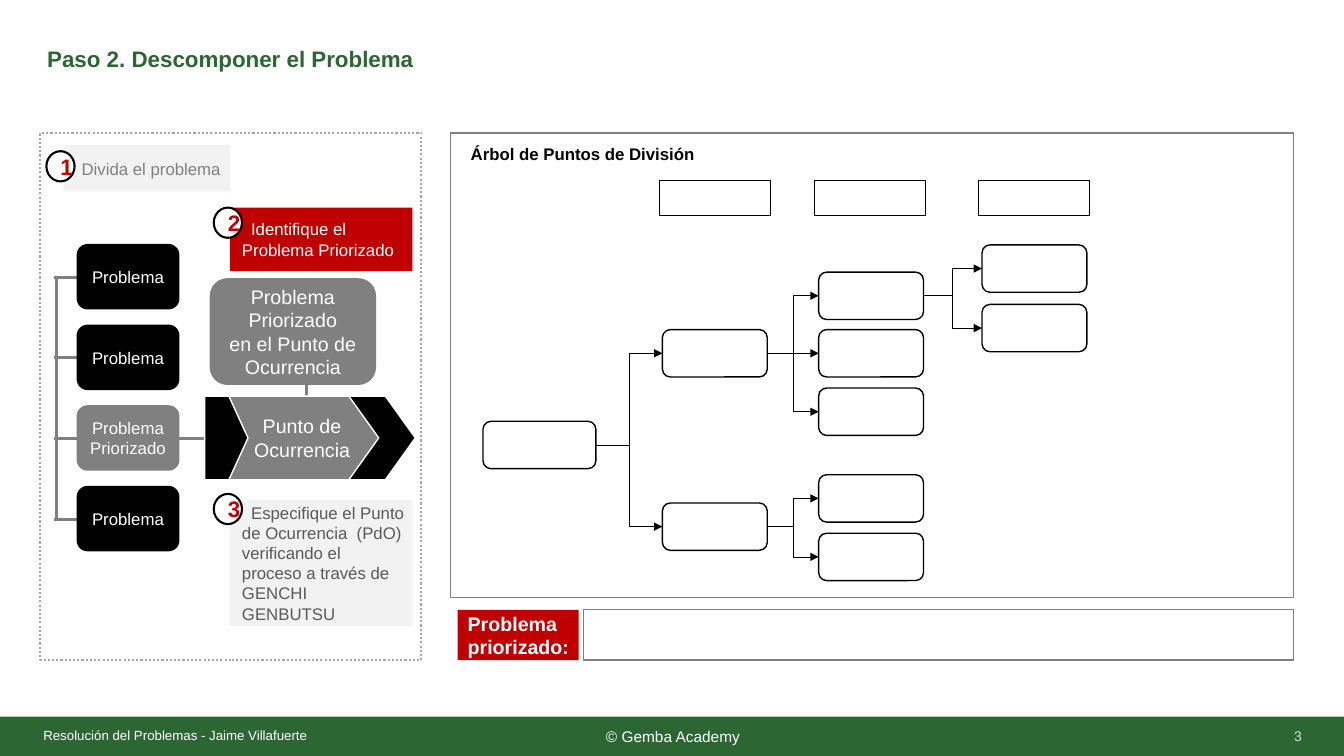
from dataclasses import dataclass
from typing import Optional

from lxml.etree import SubElement
from pptx import Presentation
from pptx.dml.color import RGBColor
from pptx.enum.dml import MSO_LINE
from pptx.enum.shapes import MSO_CONNECTOR, MSO_SHAPE
from pptx.enum.text import MSO_ANCHOR, PP_ALIGN
from pptx.oxml.ns import qn
from pptx.shapes.autoshape import Shape
from pptx.shapes.connector import Connector
from pptx.slide import Slide
from pptx.util import Emu, Pt

EMU_PER_PX = 9144
FONT = "Arial"
WHITE = RGBColor(0xFF, 0xFF, 0xFF)
BLACK = RGBColor(0x00, 0x00, 0x00)
GREEN = RGBColor(0x2B, 0x66, 0x33)
RED = RGBColor(0xC0, 0x00, 0x00)
GRAY = RGBColor(0x80, 0x80, 0x80)
DARK_GRAY = RGBColor(0x59, 0x59, 0x59)
DOT_GRAY = RGBColor(0xA6, 0xA6, 0xA6)
PALE_GRAY = RGBColor(0xF2, 0xF2, 0xF2)
NUMBER_GRAY = RGBColor(0xD9, 0xD9, 0xD9)

PROBLEM_TOP, PROBLEM_STEP, PROBLEM_HEIGHT = 242, 80, 65
LEVEL_LEFTS = (479, 657, 812, 974)
NODE_HEIGHT = 47


@dataclass(frozen=True)
class Label:
    text: str
    size: float
    color: RGBColor = WHITE
    bold: bool = False
    align: PP_ALIGN = PP_ALIGN.CENTER
    anchor: MSO_ANCHOR = MSO_ANCHOR.MIDDLE
    insets: tuple[int, int, int, int] = (10, 5, 10, 5)
    indent: int = 0
    line_spacing: Optional[float] = None


@dataclass(frozen=True)
class Box:
    left: int
    top: int
    width: int
    height: int
    preset: MSO_SHAPE = MSO_SHAPE.RECTANGLE
    fill: Optional[RGBColor] = None
    line: Optional[RGBColor] = None
    weight: float = 1
    dash: Optional[MSO_LINE] = None
    adjustment: Optional[float] = None
    label: Optional[Label] = None


@dataclass(frozen=True)
class Node:
    name: str
    level: int
    top: int
    parent: Optional[str] = None


def px(length: int) -> Emu:
    return Emu(length * EMU_PER_PX)


def write_label(shape: Shape, label: Label) -> None:
    frame = shape.text_frame
    frame.word_wrap = True
    frame.vertical_anchor = label.anchor
    frame.margin_left, frame.margin_top, frame.margin_right, frame.margin_bottom = map(px, label.insets)
    frame.text = label.text
    for paragraph in frame.paragraphs:
        paragraph.alignment = label.align
        if label.line_spacing:
            paragraph.line_spacing = label.line_spacing
        if label.indent:
            paragraph._p.get_or_add_pPr().set("indent", str(px(label.indent)))
        paragraph.font.name = FONT
        paragraph.font.size = Pt(label.size)
        paragraph.font.bold = label.bold
        paragraph.font.color.rgb = label.color


def draw_box(slide: Slide, box: Box) -> Shape:
    shape = slide.shapes.add_shape(box.preset, px(box.left), px(box.top), px(box.width), px(box.height))
    shape.shadow.inherit = False
    if box.adjustment is not None:
        shape.adjustments[0] = box.adjustment
    if box.fill is None:
        shape.fill.background()
    else:
        shape.fill.solid()
        shape.fill.fore_color.rgb = box.fill
    if box.line is None:
        shape.line.fill.background()
    else:
        shape.line.color.rgb = box.line
        shape.line.width = Pt(box.weight)
        if box.dash:
            shape.line.dash_style = box.dash
    if box.label:
        write_label(shape, box.label)
    return shape


def draw_text(slide: Slide, left: int, top: int, width: int, height: int, label: Label) -> None:
    write_label(slide.shapes.add_textbox(px(left), px(top), px(width), px(height)), label)


def draw_connector(slide: Slide, kind: MSO_CONNECTOR, start: tuple[int, int], end: tuple[int, int],
                   color: RGBColor, weight: float) -> Connector:
    connector = slide.shapes.add_connector(kind, px(start[0]), px(start[1]), px(end[0]), px(end[1]))
    connector.line.color.rgb = color
    connector.line.width = Pt(weight)
    SubElement(connector._element.spPr, qn("a:effectLst"))
    return connector


def draw_frame(slide: Slide) -> None:
    draw_box(slide, Box(0, 711, 1335, 40, fill=GREEN, label=Label("© Gemba Academy", 11)))
    draw_text(slide, 37, 34, 1150, 52, Label("Paso 2. Descomponer el Problema", 16, GREEN, True,
                                             PP_ALIGN.LEFT, line_spacing=0.9))
    draw_text(slide, 43, 717, 300, 24, Label("Resolución del Problemas - Jaime Villafuerte", 9.5,
                                             align=PP_ALIGN.LEFT, insets=(0, 0, 0, 0)))
    draw_text(slide, 1001, 710, 300, 40, Label("3", 10, NUMBER_GRAY, align=PP_ALIGN.RIGHT))


def draw_guide(slide: Slide) -> None:
    problems = ("Problema", "Problema", "Problema\nPriorizado", "Problema")
    tops = [PROBLEM_TOP + row * PROBLEM_STEP for row in range(len(problems))]
    middles = [top + 33 for top in tops]
    links = [((76, middle), (54, middle)) for middle in middles]
    links += [((56, middles[0]), (56, middles[-1])), ((178, middles[2]), (203, middles[2])),
              ((304, 394), (304, 380))]
    for start, end in links:
        draw_connector(slide, MSO_CONNECTOR.STRAIGHT, start, end, GRAY, 2.25)
    for text, top in zip(problems, tops):
        fill = GRAY if "Priorizado" in text else BLACK
        draw_box(slide, Box(76, top, 102, PROBLEM_HEIGHT, MSO_SHAPE.ROUNDED_RECTANGLE, fill,
                            label=Label(text, 12)))
    steps = (
        Box(63, 144, 165, 46, fill=PALE_GRAY,
            label=Label("Divida el problema", 12, GRAY, align=PP_ALIGN.LEFT, insets=(18, 0, 0, 0))),
        Box(228, 206, 181, 63, fill=RED,
            label=Label("Identifique el Problema Priorizado", 12, align=PP_ALIGN.LEFT,
                        insets=(12, 0, 0, 0), indent=9)),
        Box(228, 496, 181, 125, fill=PALE_GRAY,
            label=Label("Especifique el Punto de Ocurrencia  (PdO) verificando el proceso a través de "
                        "GENCHI GENBUTSU", 12, DARK_GRAY, align=PP_ALIGN.LEFT,
                        insets=(12, 0, 8, 0), indent=9)),
    )
    process = (
        Box(208, 276, 165, 106, MSO_SHAPE.ROUNDED_RECTANGLE, GRAY,
            label=Label("Problema Priorizado\nen el Punto de Ocurrencia", 14)),
        Box(219, 393, 180, 83, MSO_SHAPE.PENTAGON, GRAY, WHITE, adjustment=0.45,
            label=Label("Punto de\nOcurrencia", 14)),
        Box(203, 393, 43, 83, MSO_SHAPE.PENTAGON, BLACK, WHITE, adjustment=0.44),
        Box(346, 393, 66, 83, MSO_SHAPE.CHEVRON, BLACK, WHITE, adjustment=0.45),
    )
    for box in steps + process:
        draw_box(slide, box)
    for number, (left, top) in enumerate(((46, 150), (212, 206), (212, 490)), start=1):
        draw_box(slide, Box(left, top, 28, 30, MSO_SHAPE.OVAL, WHITE, BLACK, 1.5,
                            label=Label(str(number), 16, RED, True)))
    draw_box(slide, Box(40, 132, 378, 523, line=DOT_GRAY, weight=1.5, dash=MSO_LINE.ROUND_DOT))


def draw_tree(slide: Slide) -> None:
    draw_box(slide, Box(447, 132, 836, 461, line=GRAY))
    draw_text(slide, 457, 138, 279, 30, Label("Árbol de Puntos de División", 12, BLACK, True,
                                              PP_ALIGN.LEFT, MSO_ANCHOR.TOP))
    for left in (654, 808, 971):
        draw_box(slide, Box(left, 179, 110, 35, line=BLACK, weight=0.75))
    nodes = (
        Node("root", 0, 418),
        Node("upper", 1, 327, "root"), Node("lower", 1, 499, "root"),
        Node("upper first", 2, 270, "upper"), Node("upper second", 2, 327, "upper"),
        Node("upper third", 2, 385, "upper"),
        Node("lower first", 2, 471, "lower"), Node("lower second", 2, 529, "lower"),
        Node("leaf first", 3, 243, "upper first"), Node("leaf second", 3, 302, "upper first"),
    )
    drawn: dict[str, Shape] = {}
    for node in nodes:
        width = 104 if node.parent else 112
        drawn[node.name] = draw_box(slide, Box(LEVEL_LEFTS[node.level], node.top, width, NODE_HEIGHT,
                                               MSO_SHAPE.ROUNDED_RECTANGLE, line=BLACK))
        if node.parent:
            arrow = draw_connector(slide, MSO_CONNECTOR.ELBOW, (0, 0), (0, 0), BLACK, 0.5)
            arrow.begin_connect(drawn[node.parent], 3)
            arrow.end_connect(drawn[node.name], 1)
            SubElement(arrow.line._get_or_add_ln(), qn("a:tailEnd"), type="triangle")


def draw_priority(slide: Slide) -> None:
    draw_box(slide, Box(454, 605, 120, 50, fill=RED,
                        label=Label("Problema priorizado:", 14, bold=True, align=PP_ALIGN.LEFT,
                                    insets=(10, 5, 0, 5))))
    draw_box(slide, Box(579, 605, 704, 50, line=GRAY))


def main() -> None:
    presentation = Presentation()
    presentation.slide_width, presentation.slide_height = px(1333), px(750)
    slide = presentation.slides.add_slide(presentation.slide_layouts[6])
    draw_frame(slide)
    draw_guide(slide)
    draw_tree(slide)
    draw_priority(slide)
    presentation.save("out.pptx")


if __name__ == "__main__":
    main()
